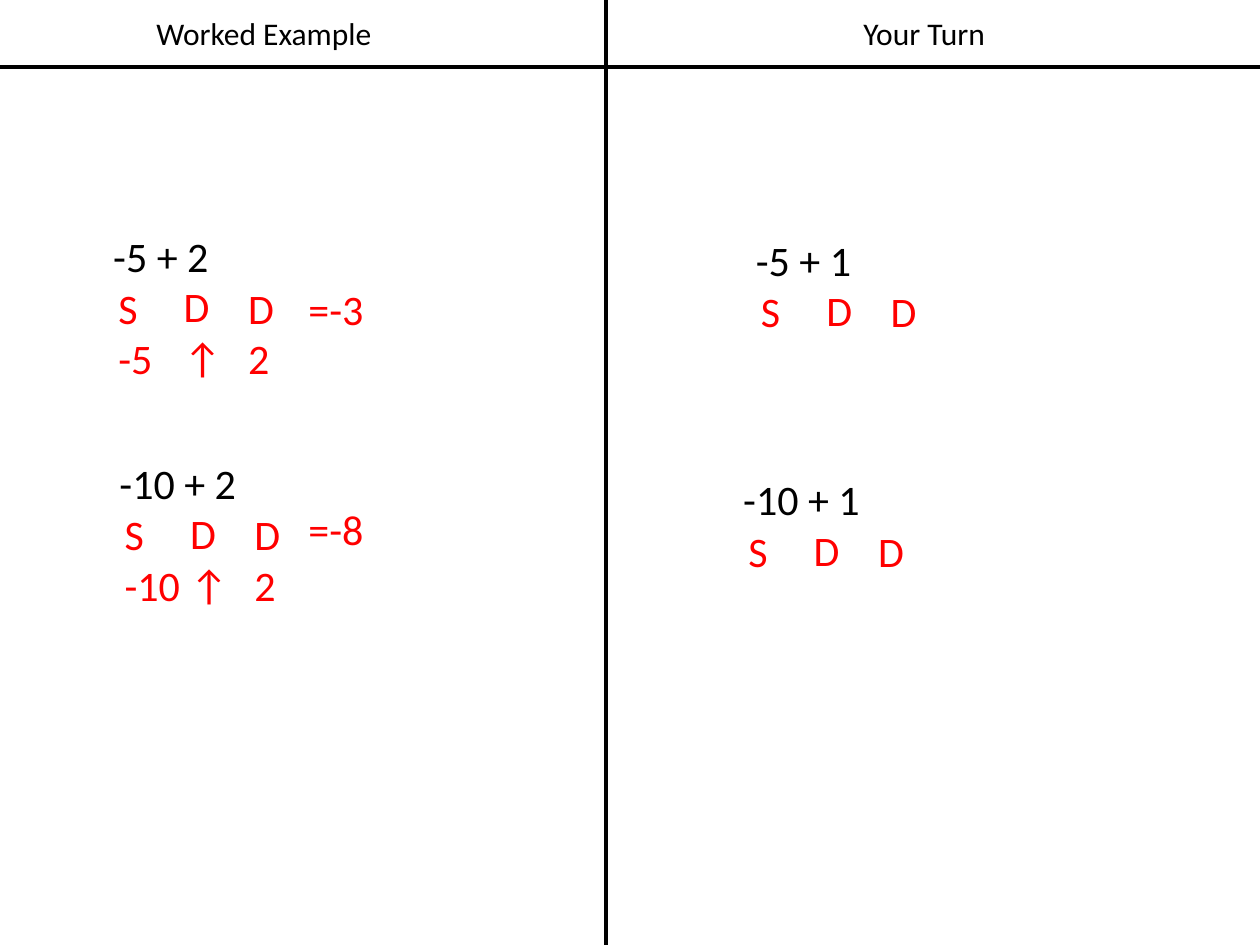
import dataclasses

import pptx
import pptx.dml.color
import pptx.enum.shapes
import pptx.enum.text
import pptx.oxml
import pptx.oxml.ns
import pptx.util

Inches = pptx.util.Inches
Align = pptx.enum.text.PP_ALIGN
AutoSize = pptx.enum.text.MSO_AUTO_SIZE


@dataclasses.dataclass(frozen=True)
class Theme:
    font: str = "Calibri"
    ink: str = "000000"
    working: str = "FF0000"
    heading_size: int = 18
    body_size: int = 24
    rule_width: float = 2.5


THEME = Theme()
SLIDE_WIDTH, SLIDE_HEIGHT = 10, 7.5
DIVIDER_X, HEADER_Y = 4.81, 0.53
LETTER_OFFSETS = ((0.04, 0.41), (0.56, 0.4), (1.07, 0.41))
LETTER_WIDTH, LINE_HEIGHT, TWO_LINE_HEIGHT = 0.59, 0.5, 0.91


def add_text(slide, text, box, *, size=THEME.body_size, color=THEME.ink,
             align=Align.LEFT, wrap=True):
    shape = slide.shapes.add_textbox(*map(Inches, box))
    frame = shape.text_frame
    frame.word_wrap = wrap
    frame.auto_size = AutoSize.SHAPE_TO_FIT_TEXT
    frame.text = text
    for paragraph in frame.paragraphs:
        paragraph.alignment = align
        font = paragraph.runs[0].font
        font.name = THEME.font
        font.size = pptx.util.Pt(size)
        font.color.rgb = pptx.dml.color.RGBColor.from_string(color)


def add_rule(slide, start, end):
    connector = slide.shapes.add_connector(
        pptx.enum.shapes.MSO_CONNECTOR.STRAIGHT, *map(Inches, start + end))
    connector.line.color.rgb = pptx.dml.color.RGBColor.from_string(THEME.ink)
    connector.line.width = pptx.util.Pt(THEME.rule_width)
    properties = connector._element.spPr
    properties.append(pptx.oxml.parse_xml(
        f'<a:effectLst {pptx.oxml.ns.nsdecls("a")}/>'))


def add_problem(slide, equation, box, columns):
    left, top, width, height = box
    add_text(slide, equation, box, wrap=False)
    for column, (offset_x, offset_y) in zip(columns, LETTER_OFFSETS):
        column_width = 0.66 if "-10" in column else LETTER_WIDTH
        add_text(slide, column,
                 (left + offset_x, top + offset_y, column_width, TWO_LINE_HEIGHT),
                 color=THEME.working)


def add_heading(slide, text, box):
    add_text(slide, text, box, size=THEME.heading_size, align=Align.CENTER)


def add_worked_example(slide, box):
    left, top, width, height = box
    add_heading(slide, "Worked Example", (left + 1.13, top + 0.06, 1.93, 0.4))
    problems = (
        ("-5 + 2", 0.8, 1.78, 0.96, "-5", "=-3", 2.2),
        ("-10 + 2", 0.85, 3.58, 1.13, "-10", "=-8", 3.95),
    )
    for equation, x, y, equation_width, start, answer, answer_y in problems:
        add_problem(slide, equation,
                    (left + x, top + y, equation_width, LINE_HEIGHT),
                    (f"S\n{start}", "D\n↑", "D\n2"))
        add_text(slide, answer, (left + 2.35, top + answer_y, 0.9, TWO_LINE_HEIGHT),
                 color=THEME.working)


def add_your_turn(slide, box):
    left, top, width, height = box
    add_heading(slide, "Your Turn", (left + 1.56, top + 0.06, 1.93, 0.4))
    problems = (("-5 + 1", 1.09, 1.81, 0.96), ("-10 + 1", 0.99, 3.71, 1.13))
    for equation, x, y, equation_width in problems:
        add_problem(slide, equation,
                    (left + x, top + y, equation_width, LINE_HEIGHT), "SDD")


def add_rules(slide, box):
    left, top, width, height = box
    add_rule(slide, (left + DIVIDER_X, top), (left + DIVIDER_X, top + height))
    add_rule(slide, (left, top + HEADER_Y), (left + width, top + HEADER_Y))


def main():
    presentation = pptx.Presentation()
    presentation.slide_width = Inches(SLIDE_WIDTH)
    presentation.slide_height = Inches(SLIDE_HEIGHT)
    slide = presentation.slides.add_slide(presentation.slide_layouts[6])
    add_worked_example(slide, (0, 0, DIVIDER_X, SLIDE_HEIGHT))
    add_your_turn(slide, (DIVIDER_X, 0, SLIDE_WIDTH - DIVIDER_X, SLIDE_HEIGHT))
    add_rules(slide, (0, 0, SLIDE_WIDTH, SLIDE_HEIGHT))
    presentation.save("out.pptx")


if __name__ == "__main__":
    main()
